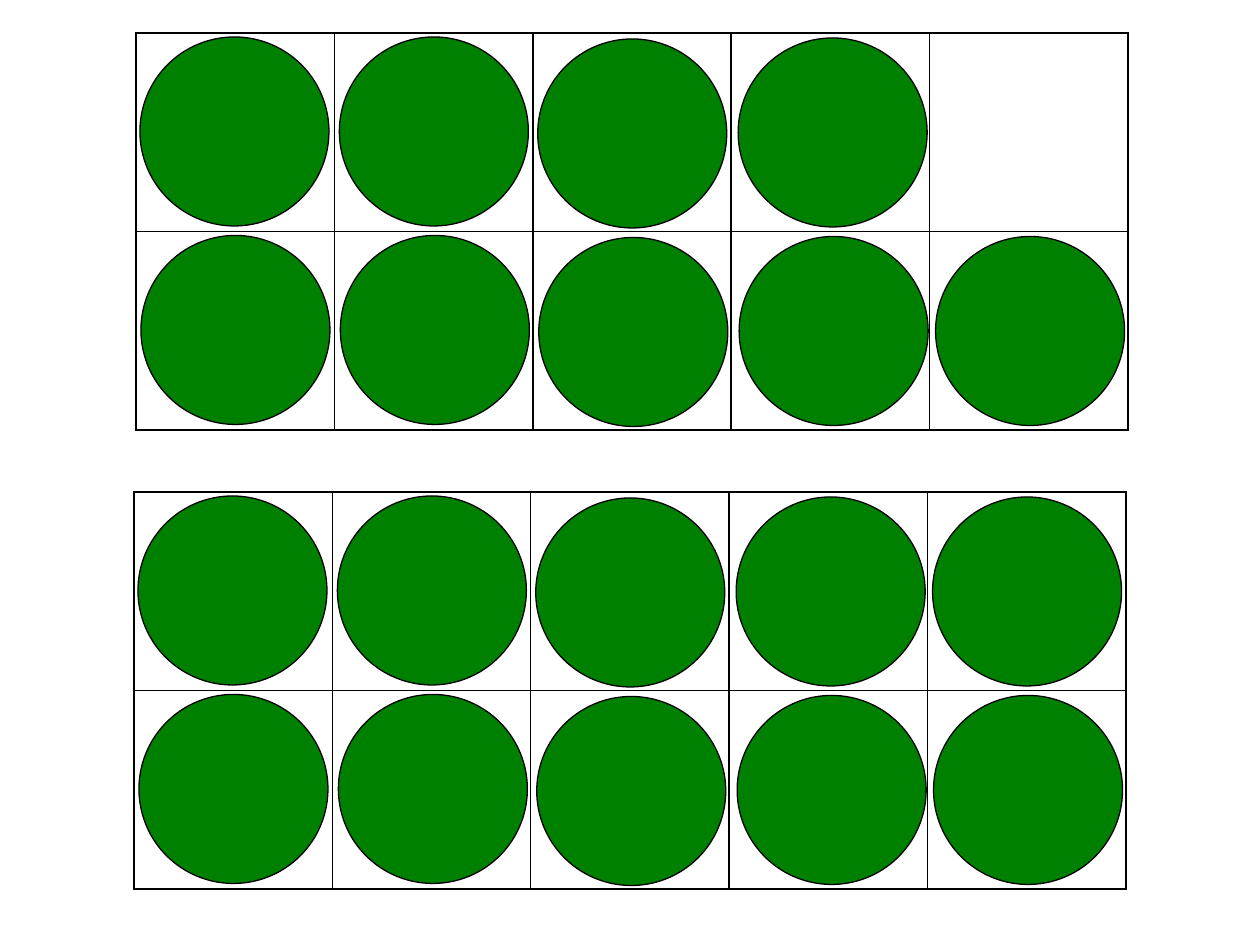
import pptx
import pptx.dml.color
import pptx.enum.shapes
import pptx.oxml
import pptx.oxml.ns
import pptx.util

PX = 914400 / 126
COLORS = {"line": "000000", "counter": "008000"}
ROWS, COLUMNS = 2, 5
COUNTER_SIZE = 189
# Placement of the counters inside their cells, by column
COUNTER_LEFT = [4, 5, 5, 7, 5]
COUNTER_TOP = [4, 4, 6, 5, 5]
ROW_SHIFT = 1


def emu(pixels):
    return pptx.util.Emu(round(pixels * PX))


def rgb(name):
    return pptx.dml.color.RGBColor.from_string(COLORS[name])


def style_cell(cell):
    cell.fill.background()
    properties = cell._tc.get_or_add_tcPr()
    for index, side in enumerate(("lnL", "lnR", "lnT", "lnB")):
        border = pptx.oxml.parse_xml(
            f'<a:{side} {pptx.oxml.ns.nsdecls("a")} w="{pptx.util.Pt(1)}">'
            f'<a:solidFill><a:srgbClr val="{COLORS["line"]}"/></a:solidFill>'
            f'</a:{side}>')
        properties.insert(index, border)


def add_counter(slide, left, top):
    counter = slide.shapes.add_shape(
        pptx.enum.shapes.MSO_SHAPE.OVAL, emu(left), emu(top),
        emu(COUNTER_SIZE), emu(COUNTER_SIZE))
    counter.shadow.inherit = False
    counter.fill.solid()
    counter.fill.fore_color.rgb = rgb("counter")
    counter.line.color.rgb = rgb("line")
    counter.line.width = pptx.util.Pt(0.75)


def add_ten_frame(slide, left, top, width, height, empty_cells=()):
    # Grid
    frame = slide.shapes.add_table(
        ROWS, COLUMNS, emu(left), emu(top), emu(width), emu(height))
    table = frame.table
    table.first_row = False
    table.horz_banding = False
    for cell in table.iter_cells():
        style_cell(cell)

    # Counters
    for row in range(ROWS):
        for column in range(COLUMNS):
            if (row, column) not in empty_cells:
                add_counter(
                    slide,
                    left + column * width / COLUMNS + COUNTER_LEFT[column] + row * ROW_SHIFT,
                    top + row * height / ROWS + COUNTER_TOP[column])


def main():
    presentation = pptx.Presentation()
    presentation.slide_width = emu(1260)
    presentation.slide_height = emu(945)
    slide = presentation.slides.add_slide(presentation.slide_layouts[6])

    add_ten_frame(slide, 136, 33, 992, 397, empty_cells=[(0, 4)])
    add_ten_frame(slide, 134, 492, 992, 397)

    presentation.save("out.pptx")


if __name__ == "__main__":
    main()
